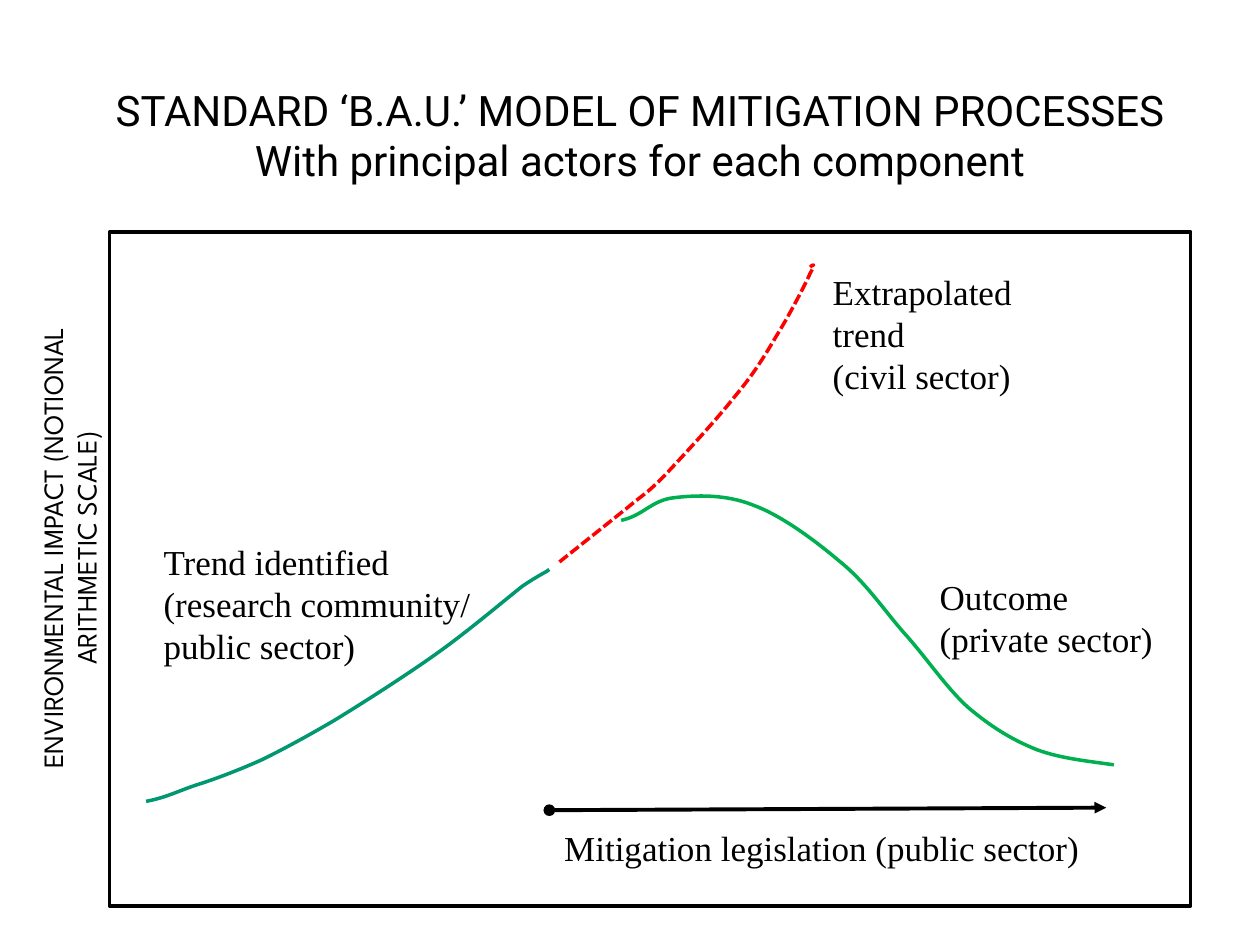
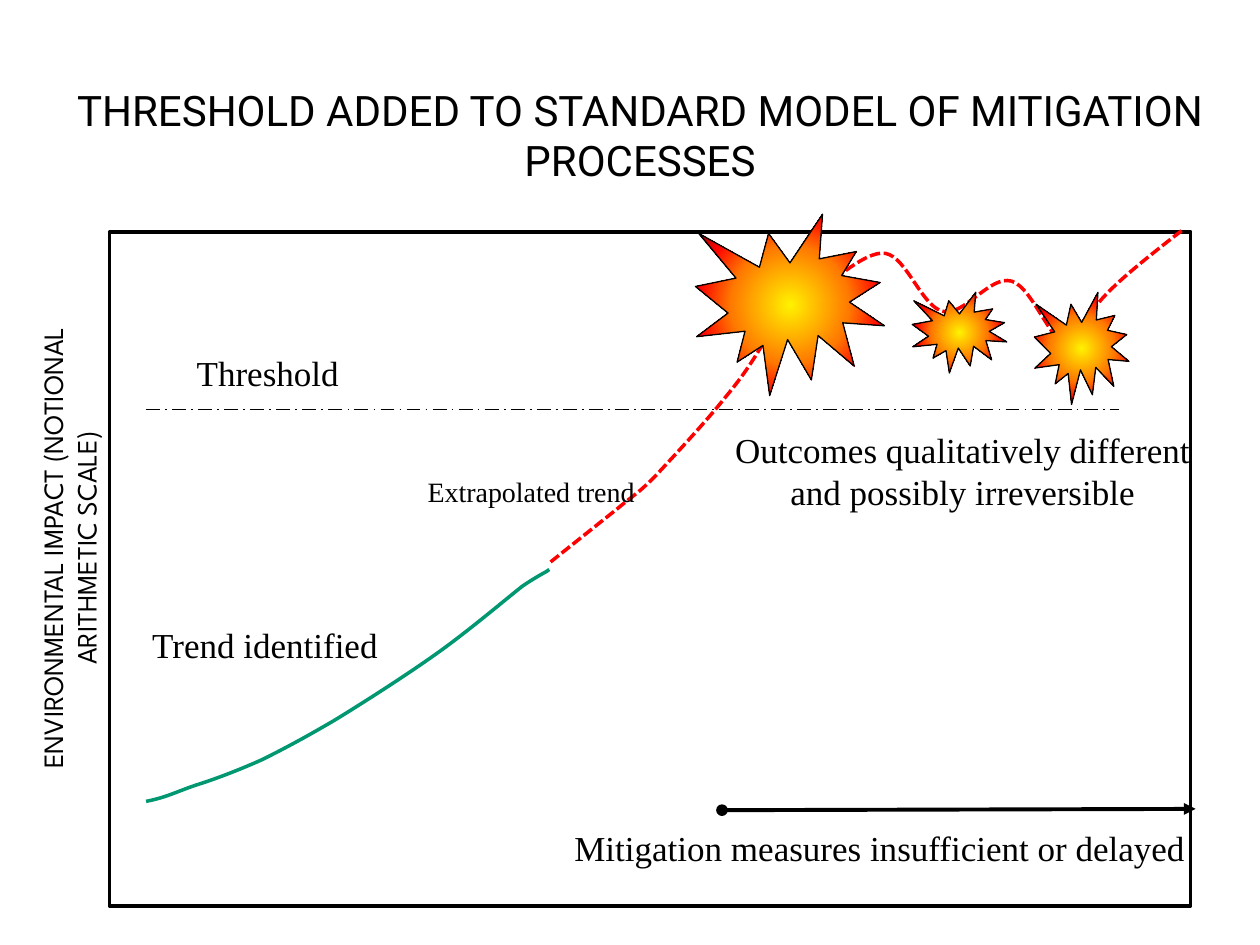
from math import cos, radians, sin

from lxml.etree import SubElement
from pptx import Presentation
from pptx.dml.color import RGBColor
from pptx.enum.dml import MSO_LINE
from pptx.enum.shapes import MSO_CONNECTOR, MSO_SHAPE
from pptx.enum.text import MSO_ANCHOR, MSO_AUTO_SIZE, PP_ALIGN
from pptx.oxml import parse_xml
from pptx.oxml.ns import nsdecls, qn
from pptx.util import Inches, Pt

BLACK = RGBColor(0, 0, 0)
WHITE = RGBColor(255, 255, 255)
RED = RGBColor(255, 0, 0)
TEAL = RGBColor(0x00, 0x97, 0x71)
GREEN = RGBColor(0x00, 0xB0, 0x50)
FLAME = [(0, "FFF200"), (45, "FF7A00"), (70, "FF0300"), (100, "4D0808")]
SERIF, SANS, AXIS = "Times New Roman", "Roboto", "League Spartan"
LEFT, CENTER = PP_ALIGN.LEFT, PP_ALIGN.CENTER
DASH, DOTTED = MSO_LINE.SQUARE_DOT, MSO_LINE.LONG_DASH_DOT

TITLE_BOX = (0.51, 0.44, 9.14, 1.26)
FRAME = (0.87, 1.84, 8.58, 5.35)
AXIS_BOX = (-1.46, 4.03, 4.02, 0.64)
AXIS_TEXT = "ENVIRONMENTAL IMPACT (NOTIONAL ARITHMETIC SCALE)"
PIVOT, TURN = (7.92, 2.18), 231.7

# Each curve is a start point, then Bezier segments of two handles and an end.
# One extra point after the start is the end of a straight segment.
TREND = [(1.16, 6.36),
         (1.32, 6.33), (1.41, 6.28), (1.56, 6.23),
         (1.72, 6.18), (1.9, 6.11), (2.08, 6.03),
         (2.26, 5.94), (2.41, 5.86), (2.65, 5.72),
         (2.88, 5.58), (3.24, 5.35), (3.49, 5.17),
         (3.74, 4.99), (4.01, 4.76), (4.15, 4.65),
         (4.3, 4.55), (4.34, 4.54), (4.36, 4.52)]
OUTCOME = [(4.93, 4.13),
           (5.11, 4.09), (5.17, 3.97), (5.35, 3.95),
           (5.52, 3.93), (5.76, 3.92), (5.98, 4.01),
           (6.2, 4.09), (6.47, 4.29), (6.67, 4.46),
           (6.88, 4.63), (7.02, 4.85), (7.19, 5.04),
           (7.36, 5.23), (7.52, 5.47), (7.69, 5.62),
           (7.87, 5.77), (8.03, 5.87), (8.23, 5.95),
           (8.42, 6.02), (8.63, 6.04), (8.84, 6.07)]
FORECAST = [(4.44, 4.46), (4.98, 4.03),
            (5.11, 3.92), (5.12, 3.93), (5.27, 3.78),
            (5.41, 3.63), (5.68, 3.34), (5.83, 3.15),
            (5.98, 2.97), (6.06, 2.84), (6.16, 2.67),
            (6.26, 2.51), (6.39, 2.26), (6.43, 2.17),
            (6.48, 2.08), (6.45, 2.1), (6.43, 2.12)]
SHIFTED = [(x - 0.07, y) for x, y in FORECAST]
BOUNCE = [(9.35, 1.85),
          (8.61, 2.42), (8.64, 2.47), (8.48, 2.79),
          (8.31, 2.75), (8.17, 2.3), (8, 2.25),
          (7.83, 2.2), (7.62, 2.53), (7.46, 2.49),
          (7.29, 2.46), (7.17, 2.06), (7, 2.03),
          (6.83, 2), (6.53, 2.31), (6.43, 2.34),
          (6.33, 2.36), (6.36, 2.36), (6.39, 2.37)]

# Parts run from back to front:
# label: text, box, size, alignment, white backing
# curve: points, colour, dash, rotation
# line: start, end, width, dash, ends
# group: list of parts
ENDS = {"a:headEnd": "oval", "a:tailEnd": "triangle"}
SLIDES = [
    ("STANDARD ‘B.A.U.’ MODEL OF MITIGATION PROCESSES\v"
     "With principal actors for each component",
     [("label", "Outcome (private sector)",
       (7.36, 4.52, 2.06, 0.77), 20, LEFT, True),
      ("label", "Trend identified\n(research community/\npublic sector)",
       (1.2, 4.24, 2.94, 1.11), 20, LEFT, True),
      ("curve", TREND, TEAL),
      ("curve", OUTCOME, GREEN),
      ("group", [("curve", FORECAST, RED, DASH),
                 ("label", "Extrapolated trend\n(civil sector)",
                  (6.51, 2.1, 2.09, 1.11), 20, LEFT, True)]),
      ("line", (4.36, 6.43), (8.78, 6.41), 2.25, None, ENDS),
      ("label", "Mitigation legislation (public sector)",
       (4.38, 6.51, 4.46, 0.44), 20, LEFT, True)]),
    ("THRESHOLD ADDED TO STANDARD MODEL OF MITIGATION PROCESSES",
     [("label", "Outcomes qualitatively different and possibly irreversible",
       (5.73, 3.35, 3.82, 0.77), 20, CENTER),
      ("label", "Trend identified", (1.11, 4.9, 2.09, 0.44), 20, LEFT, True),
      ("curve", TREND, TEAL),
      ("curve", SHIFTED, RED, DASH),
      ("label", "Extrapolated trend", (3.17, 3.72, 2.09, 0.37), 16, CENTER),
      ("curve", BOUNCE, RED, DASH, TURN),
      ("line", (5.73, 6.43), (9.49, 6.42), 2.25, None, ENDS),
      ("label", "Mitigation measures insufficient or delayed",
       (4.46, 6.51, 5.58, 0.44), 20, LEFT),
      ("line", (1.16, 3.25), (8.88, 3.25), 1, DOTTED),
      ("label", "Threshold", (1.08, 2.74, 2.09, 0.44), 20, CENTER),
      ("burst", (5.52, 1.7, 1.5, 1.44)),
      ("burst", (7.24, 2.32, 0.75, 0.64)),
      ("burst", (8.21, 2.32, 0.75, 0.89))]),
]


def place(box):
    return [Inches(v) for v in box]


def write(frame, text, size, font, align):
    frame.word_wrap = True
    frame.text = text
    for para in frame.paragraphs:
        para.alignment = align
        for run in para.runs:
            for name, value in {"size": Pt(size), "name": font}.items():
                setattr(run.font, name, value)
            run.font.color.rgb = BLACK


def stroke(shape, color, width, dash=None):
    shape.line.color.rgb = color
    shape.line.width = Pt(width)
    if dash:
        shape.line.dash_style = dash


def add_rect(slide, box):
    rect = slide.shapes.add_shape(MSO_SHAPE.RECTANGLE, *place(box))
    rect.shadow.inherit = False
    return rect


def add_label(slide, text, box, size, align, backed=False, font=SERIF):
    if backed:
        label = add_rect(slide, box)
        label.fill.solid()
        label.fill.fore_color.rgb = WHITE
        label.line.fill.background()
    else:
        label = slide.shapes.add_textbox(*place(box))
    frame = label.text_frame
    write(frame, text, size, font, align)
    frame.vertical_anchor = MSO_ANCHOR.TOP
    frame.auto_size = MSO_AUTO_SIZE.SHAPE_TO_FIT_TEXT
    return label


def unturn(point, angle):
    """Turn a point back about PIVOT, so that rotating the shape restores it."""
    x, y = (v - p for v, p in zip(point, PIVOT))
    c, s = cos(radians(angle)), sin(radians(angle))
    return PIVOT[0] + x * c + y * s, PIVOT[1] - x * s + y * c


def bend(curve, first):
    """Join the line segments from number first on, by threes, into Beziers."""
    lines = list(curve.element.iter(qn("a:lnTo")))[first:]
    for i in range(0, len(lines), 3):
        trio = lines[i:i + 3]
        bezier = parse_xml(f'<a:cubicBezTo {nsdecls("a")}/>')
        trio[0].addprevious(bezier)
        for line in trio:
            bezier.append(line[0])
            line.getparent().remove(line)


def add_curve(slide, points, color, dash=None, angle=0):
    spots = [place(unturn(p, angle)) for p in points]
    pen = slide.shapes.build_freeform(*spots[0])
    pen.add_line_segments(spots[1:], close=False)
    curve = pen.convert_to_shape()
    bend(curve, (len(points) - 1) % 3)
    curve.rotation = angle
    curve.shadow.inherit = False
    curve.fill.background()
    stroke(curve, color, 2, dash)
    return curve


def add_line(slide, start, end, width, dash=None, ends=None):
    line = slide.shapes.add_connector(MSO_CONNECTOR.STRAIGHT,
                                      *place(start + end))
    stroke(line, BLACK, width, dash)
    props = line.element.spPr
    for tag, kind in (ends or {}).items():
        SubElement(props.find(qn("a:ln")), qn(tag), type=kind)
    SubElement(props, qn("a:effectLst"))
    return line


def add_burst(slide, box):
    burst = slide.shapes.add_shape(MSO_SHAPE.EXPLOSION1, *place(box))
    burst.shadow.inherit = False
    stroke(burst, BLACK, 0.75)
    burst.fill.background()
    stops = "".join(f'<a:gs pos="{pos * 1000}"><a:srgbClr val="{color}"/></a:gs>'
                    for pos, color in FLAME)
    glow = parse_xml(
        f'<a:gradFill {nsdecls("a")} rotWithShape="1"><a:gsLst>{stops}</a:gsLst>'
        '<a:path path="circle"><a:fillToRect l="50000" t="50000" r="50000" '
        'b="50000"/></a:path></a:gradFill>')
    props = burst.element.spPr
    props.replace(props.find(qn("a:noFill")), glow)
    return burst


def add_group(slide, parts):
    return slide.shapes.add_group_shape([add_part(slide, *p) for p in parts])


def add_part(slide, kind, *args):
    return MAKERS[kind](slide, *args)


MAKERS = {"label": add_label, "curve": add_curve, "line": add_line,
          "burst": add_burst, "group": add_group}


def add_base(slide, text):
    """Add the title, plot frame and axis caption that all slides share."""
    title = slide.shapes.title
    for name, value in zip(("left", "top", "width", "height"), place(TITLE_BOX)):
        setattr(title, name, value)
    title.text_frame.vertical_anchor = MSO_ANCHOR.MIDDLE
    write(title.text_frame, text, 24, SANS, CENTER)
    frame = add_rect(slide, FRAME)
    frame.fill.background()
    stroke(frame, BLACK, 2)
    axis = add_label(slide, AXIS_TEXT, AXIS_BOX, 16, CENTER, font=AXIS)
    axis.rotation = 270


def main():
    deck = Presentation()
    deck.slide_width, deck.slide_height = Inches(10), Inches(7.5)
    for title, parts in SLIDES:
        slide = deck.slides.add_slide(deck.slide_layouts[5])
        add_base(slide, title)
        for part in parts:
            add_part(slide, *part)
    deck.save("out.pptx")


if __name__ == "__main__":
    main()
